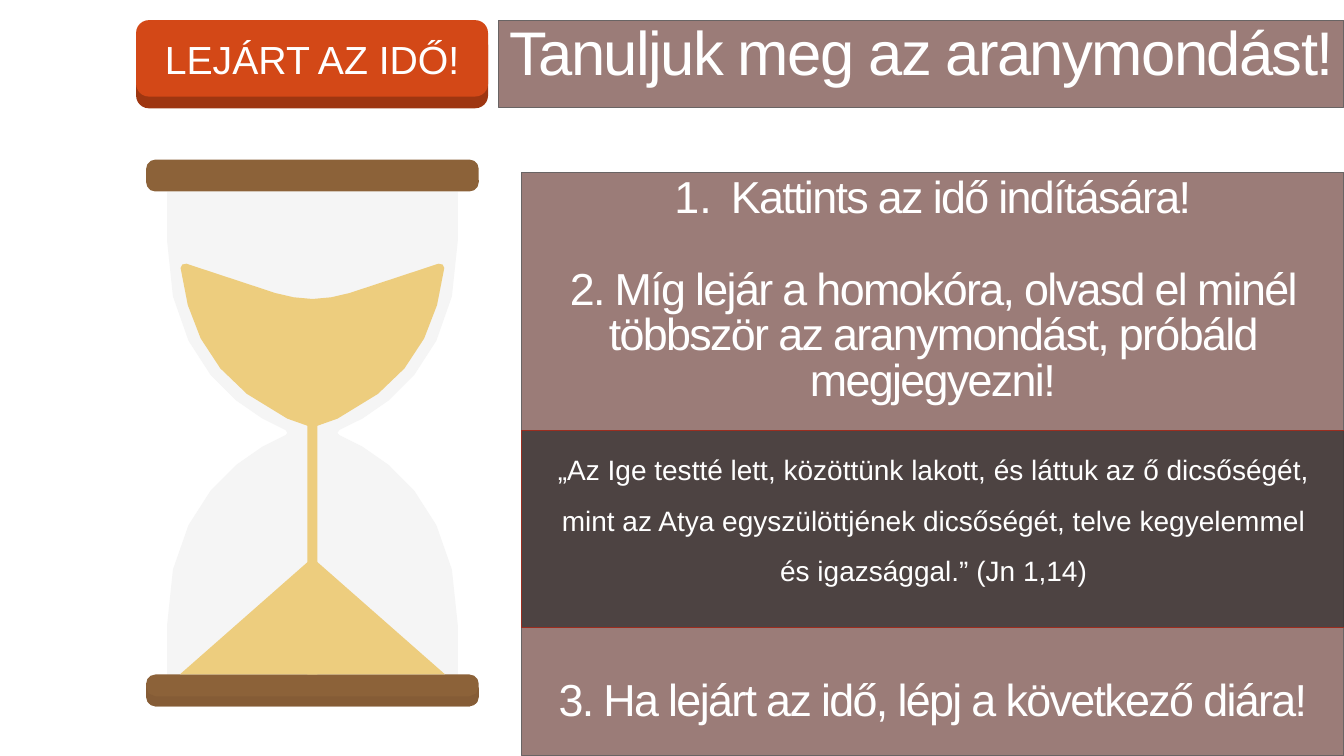
from dataclasses import dataclass
from math import dist

from lxml.etree import SubElement
from pptx import Presentation
from pptx.dml.color import RGBColor
from pptx.enum.shapes import MSO_SHAPE
from pptx.enum.text import MSO_ANCHOR, MSO_AUTO_SIZE, PP_ALIGN
from pptx.oxml.ns import qn
from pptx.util import Inches, Pt

# The slide is a grid of 1600 columns by 900 rows with square cells.
CELL = Inches(7.5) // 900
CENTRE = 372  # column of the hourglass axis

WHITE = RGBColor(0xFF, 0xFF, 0xFF)
MAROON = RGBColor(0x4E, 0x17, 0x10)
GREY = RGBColor(0x69, 0x64, 0x64)
CHARCOAL = RGBColor(0x35, 0x32, 0x32)
RED = RGBColor(0x9B, 0x2D, 0x1F)
GLASS = RGBColor(0xF5, 0xF5, 0xF5)
WOOD = RGBColor(0x8C, 0x62, 0x39)
WOOD_SHADE = RGBColor(0x85, 0x5C, 0x36)
SAND = RGBColor(0xED, 0xCD, 0x7E)
ORANGE = RGBColor(0xD3, 0x48, 0x17)
ORANGE_SHADE = RGBColor(0x9E, 0x36, 0x11)

FONT = "Arial"
TIGHT = -1.2
STEP_LINE = 32 * 1.2 * 0.85  # height of one line of the steps, in points

Point = tuple[float, float]


@dataclass(frozen=True)
class Box:
    left: int
    top: int
    width: int
    height: int

    def lengths(self) -> tuple[int, ...]:
        return tuple(n * CELL for n in (self.left, self.top, self.width, self.height))


@dataclass(frozen=True)
class Block:
    box: Box
    color: RGBColor
    preset: MSO_SHAPE = MSO_SHAPE.RECTANGLE
    corner: float | None = None


@dataclass(frozen=True)
class Outline:
    """Left half of a symmetric outline; a step has one point (line) or three (curve)."""
    color: RGBColor
    start: Point
    steps: tuple[tuple[Point, ...], ...]


@dataclass(frozen=True)
class Step:
    text: str
    lines_before: int = 0
    numbered: bool = False


ROUND = MSO_SHAPE.ROUNDED_RECTANGLE
OUTLINES = {
    "glass": Outline(GLASS, (CENTRE, 228), (
        ((199, 228),), ((199, 287),),
        ((199, 433), (290, 491), (340, 512)),
        ((343, 514), (343, 517), (340, 518)),
        ((290, 539), (199, 598), (199, 744)),
        ((199, 803),), ((CENTRE, 803),))),
    "foot shade": Outline(WOOD_SHADE, (CENTRE, 829), (
        ((185, 829),),
        ((179, 829), (174, 824), (174, 818)),
        ((174, 829),),
        ((174, 835), (179, 841), (185, 841)),
        ((CENTRE, 841),))),
    "upper sand": Outline(SAND, (CENTRE, 356), (
        ((357, 356), (342, 353), (328, 349)),
        ((222, 314),),
        ((218, 313), (215, 316), (215, 319)),
        ((218, 350), (227, 378), (239, 403)),
        ((252, 428), (270, 451), (294, 469)),
        ((328, 497), (362, 506), (CENTRE, 509)))),
    "sand pile": Outline(SAND, (CENTRE, 664), (((214, 803),),)),
}
CAPS = [Block(Box(174, top, 396, 38), WOOD, ROUND, 0.29) for top in (190, 803)]
STREAM = Block(Box(366, 506, 12, 297), SAND)
BUTTON = [Block(Box(162, 38, 419, 91), ORANGE_SHADE, ROUND),
          Block(Box(162, 24, 419, 91), ORANGE, ROUND)]
TITLE_BOX = Box(594, 24, 1006, 104)
STEPS_BOX = Box(621, 205, 979, 695)
VERSE = Block(Box(621, 513, 981, 234), CHARCOAL)

STEPS = [
    Step("Kattints az idő indítására!", numbered=True),
    Step("2. Míg lejár a homokóra, olvasd el minél többször az aranymondást, "
         "próbáld megjegyezni!", lines_before=1),
    Step("3. Ha lejárt az idő, lépj a következő diára!", lines_before=6),
]
VERSE_TEXT = ("„Az Ige testté lett, közöttünk lakott, és láttuk az ő dicsőségét,\v"
              "mint az Atya egyszülöttjének dicsőségét, telve kegyelemmel\v"
              "és igazsággal.” (Jn 1,14)")


def paint(shape, color: RGBColor, opacity: int = 100, line: RGBColor | None = None) -> None:
    shape.fill.solid()
    shape.fill.fore_color.rgb = color
    if opacity < 100:
        node = shape.fill._xPr.find(qn("a:solidFill"))[0]
        SubElement(node, qn("a:alpha")).set("val", str(opacity * 1000))
    if line is None:
        shape.line.fill.background()
    else:
        shape.line.color.rgb = line
        shape.line.width = Pt(0.75)


def add_block(shapes, block: Block, **look):
    shape = shapes.add_shape(block.preset, *block.box.lengths())
    shape.shadow.inherit = False
    if block.corner is not None:
        shape.adjustments[0] = block.corner
    paint(shape, block.color, **look)
    return shape


def trace(outline: Outline) -> list[Point]:
    """Turn the half outline into points, then mirror it about the axis."""
    points = [outline.start]
    for step in outline.steps:
        if len(step) == 1:
            points.append(step[0])
            continue
        corners = (points[-1], *step)
        pieces = max(2, round(dist(corners[0], corners[3]) / 45))
        for i in range(1, pieces + 1):
            t = i / pieces
            weights = ((1 - t) ** 3, 3 * t * (1 - t) ** 2, 3 * t * t * (1 - t), t ** 3)
            points.append(tuple(sum(w * c[axis] for w, c in zip(weights, corners))
                                for axis in (0, 1)))
    mirrored = [(2 * CENTRE - x, y) for x, y in reversed(points) if x != CENTRE]
    return [p for i, p in enumerate(points) if p[0] != CENTRE or i in (0, len(points) - 1)] + mirrored


def add_outline(shapes, outline: Outline) -> None:
    start, *rest = [(round(x * CELL), round(y * CELL)) for x, y in trace(outline)]
    builder = shapes.build_freeform(*start)
    builder.add_line_segments(rest, close=True)
    shape = builder.convert_to_shape()
    shape.shadow.inherit = False
    paint(shape, outline.color)


def write(paragraph, text: str, *, size: int, line_spacing: float = 1.0,
          tracking: float = 0, space_before: float = 0, numbered: bool = False) -> None:
    properties = paragraph._p.get_or_add_pPr()
    indent = Inches(0.56) if numbered else 0
    properties.set("marL", str(indent))
    properties.set("indent", str(-indent))
    paragraph.alignment = PP_ALIGN.CENTER
    paragraph.line_spacing = line_spacing
    paragraph.space_before = Pt(space_before)
    if numbered:
        SubElement(properties, qn("a:buFont")).set("typeface", "+mj-lt")
        SubElement(properties, qn("a:buAutoNum")).set("type", "arabicPeriod")
    else:
        SubElement(properties, qn("a:buNone"))
    paragraph.text = text
    for run in paragraph.runs:
        run.font.name = FONT
        run.font.size = Pt(size)
        run.font.color.rgb = WHITE
        if tracking:
            run._r.get_or_add_rPr().set("spc", str(round(tracking * 100)))


def prepare_frame(shape, anchor: MSO_ANCHOR = MSO_ANCHOR.TOP):
    frame = shape.text_frame
    frame.word_wrap = True
    frame.auto_size = MSO_AUTO_SIZE.NONE
    frame.vertical_anchor = anchor
    return frame


def place_panel(placeholder, box: Box):
    placeholder.left, placeholder.top, placeholder.width, placeholder.height = box.lengths()
    paint(placeholder, MAROON, opacity=56, line=GREY)
    return prepare_frame(placeholder)


def main() -> None:
    presentation = Presentation()
    presentation.slide_width, presentation.slide_height = 1600 * CELL, 900 * CELL
    slide = presentation.slides.add_slide(presentation.slide_layouts[1])
    shapes = slide.shapes

    title = place_panel(shapes.title, TITLE_BOX)
    write(title.paragraphs[0], "Tanuljuk meg az aranymondást!",
          size=44, line_spacing=0.85, tracking=TIGHT)

    frame = place_panel(slide.placeholders[1], STEPS_BOX)
    for index, step in enumerate(STEPS):
        paragraph = frame.add_paragraph() if index else frame.paragraphs[0]
        write(paragraph, step.text, size=32, line_spacing=0.85, tracking=TIGHT,
              space_before=step.lines_before * STEP_LINE, numbered=step.numbered)

    add_outline(shapes, OUTLINES["glass"])
    for cap in CAPS:
        add_block(shapes, cap)
    for part in ("foot shade", "upper sand", "sand pile"):
        add_outline(shapes, OUTLINES[part])
    add_block(shapes, STREAM)

    group = shapes.add_group_shape()
    _, face = [add_block(group.shapes, block) for block in BUTTON]
    write(prepare_frame(face, MSO_ANCHOR.MIDDLE).paragraphs[0], "LEJÁRT AZ IDŐ!", size=28)

    verse = add_block(shapes, VERSE, opacity=76, line=RED)
    write(prepare_frame(verse).paragraphs[0], VERSE_TEXT, size=20, line_spacing=1.5)

    presentation.save("out.pptx")


if __name__ == "__main__":
    main()
